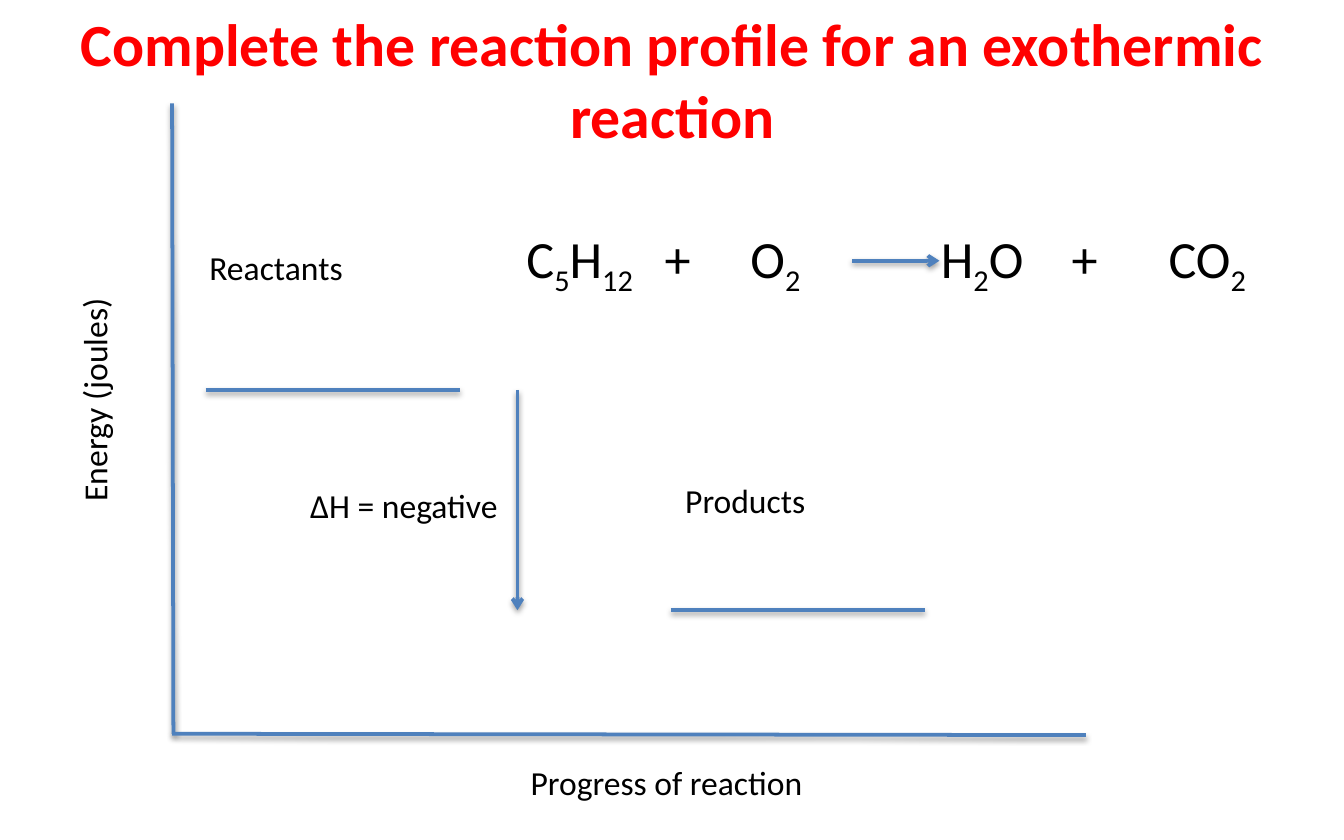
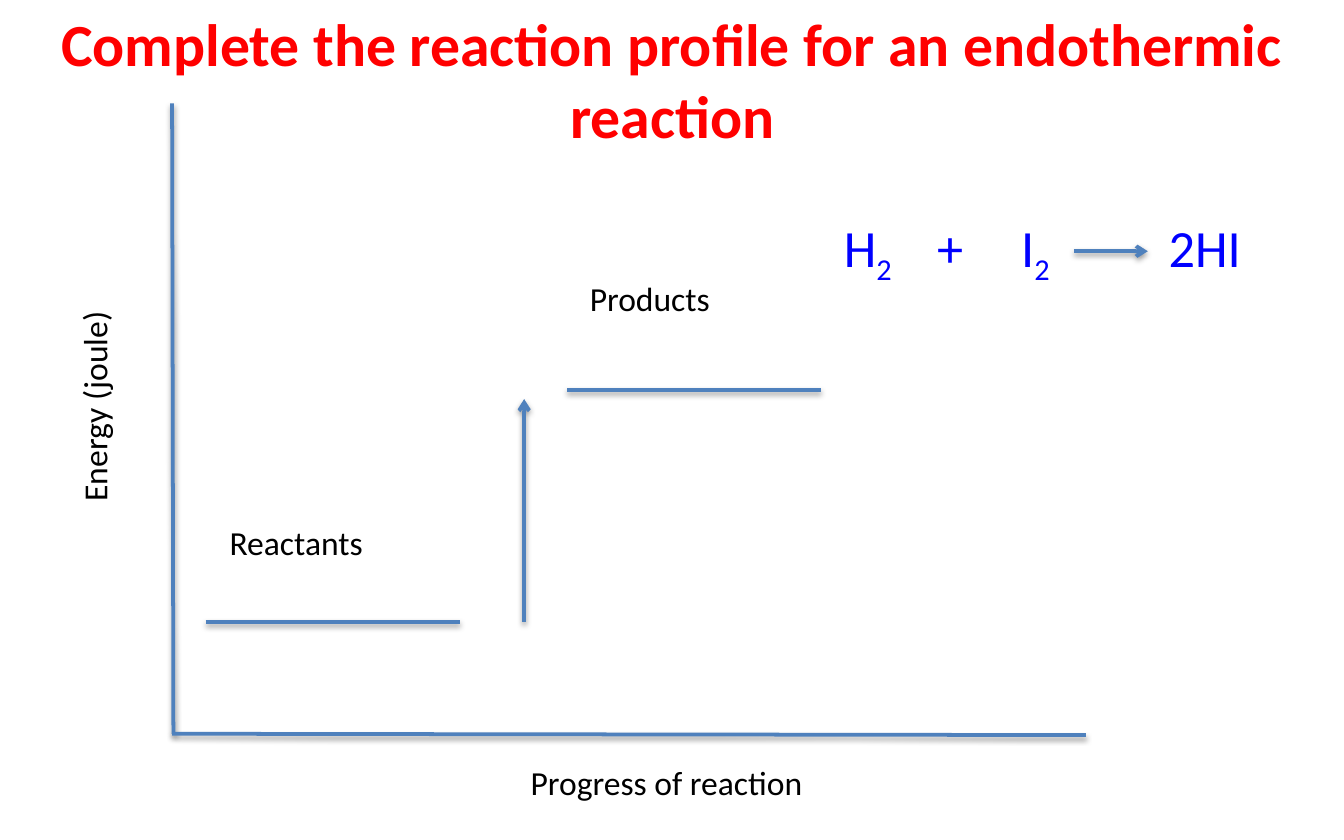
import dataclasses

import lxml.etree
import pptx
import pptx.dml.color
import pptx.enum.shapes
import pptx.enum.text
import pptx.oxml.ns
import pptx.util

Pt = pptx.util.Pt
qn = pptx.oxml.ns.qn


@dataclasses.dataclass(frozen=True)
class Theme:
    font: str = "Calibri"
    title_color: str = "FF0000"
    text_color: str = "000000"
    accent_color: str = "0000FF"
    line_color: str = "4F81BD"
    shadow_color: str = "000000"
    title_size: int = 32
    formula_size: int = 28
    label_size: int = 18
    line_width: int = 2


THEME = Theme()
LEVEL_WIDTH = 136
HIGH_LEVEL = 208.8
LABEL_HEIGHT = 28.8
LABEL_WIDTH = 152


def format_runs(paragraph, size, color, bold=False):
    for span in paragraph.runs:
        span.font.name = THEME.font
        span.font.size = Pt(size)
        span.font.bold = bold
        span.font.color.rgb = pptx.dml.color.RGBColor.from_string(color)


def add_title(page, text):
    title = page.shapes.title
    title.left, title.top, title.width, title.height = Pt(20), Pt(0), Pt(680.4), Pt(85)
    frame = title.text_frame
    frame.text = text
    frame.word_wrap = True
    frame.auto_size = pptx.enum.text.MSO_AUTO_SIZE.NONE
    frame.vertical_anchor = pptx.enum.text.MSO_ANCHOR.TOP
    para = frame.paragraphs[0]
    para.alignment = pptx.enum.text.PP_ALIGN.CENTER
    format_runs(para, THEME.title_size, THEME.title_color, bold=True)


def add_box(page, left, top, width, height):
    box = page.shapes.add_textbox(Pt(left), Pt(top), Pt(width), Pt(height))
    box.text_frame.word_wrap = True
    box.text_frame.auto_size = pptx.enum.text.MSO_AUTO_SIZE.SHAPE_TO_FIT_TEXT
    return box


def add_label(page, text, left, top, width=LABEL_WIDTH, rotation=0):
    box = add_box(page, left, top, width, LABEL_HEIGHT)
    box.rotation = rotation
    box.text_frame.text = text
    format_runs(box.text_frame.paragraphs[0], THEME.label_size, THEME.text_color)


def add_formula(page, formula, left, top, width, tab_stops, color):
    """Write a formula; braces mark subscripts and tabs move to the stops."""
    para = add_box(page, left, top, width, 41).text_frame.paragraphs[0]
    tab_list = lxml.etree.SubElement(para._p.get_or_add_pPr(), qn("a:tabLst"))
    for stop in tab_stops:
        lxml.etree.SubElement(tab_list, qn("a:tab"), pos=str(Pt(stop)), algn="l")
    for index, piece in enumerate(formula.replace("{", "}").split("}")):
        if piece:
            span = para.add_run()
            span.text = piece
            if index % 2:
                span._r.get_or_add_rPr().set("baseline", "-25000")
    format_runs(para, THEME.formula_size, color)


def add_shadow(line):
    effects = lxml.etree.SubElement(line._element.spPr, qn("a:effectLst"))
    shadow = lxml.etree.SubElement(
        effects, qn("a:outerShdw"), blurRad=str(Pt(3.1)), dist=str(Pt(1.6)),
        dir="5400000", rotWithShape="0")
    color = lxml.etree.SubElement(shadow, qn("a:srgbClr"), val=THEME.shadow_color)
    lxml.etree.SubElement(color, qn("a:alpha"), val="38000")


def add_line(page, start, end, arrow=False):
    line = page.shapes.add_connector(
        pptx.enum.shapes.MSO_CONNECTOR.STRAIGHT, *map(Pt, start + end))
    line.line.width = Pt(THEME.line_width)
    line.line.color.rgb = pptx.dml.color.RGBColor.from_string(THEME.line_color)
    if arrow:
        lxml.etree.SubElement(line.line._get_or_add_ln(), qn("a:tailEnd"), type="arrow")
    add_shadow(line)


def add_level(page, left, height):
    add_line(page, (left, height), (left + LEVEL_WIDTH, height))


def add_profile_page(deck, title, energy_label):
    """Add a page with the title, both axes and their labels."""
    page = deck.slides.add_slide(deck.slide_layouts[5])
    add_title(page, title)
    add_line(page, (92.2, 55.4), (92.9, 393.1))
    add_line(page, (92.2, 393.1), (581.8, 393.8))
    add_label(page, "Progress of reaction", 277.2, 404.6, width=269.3)
    add_label(page, energy_label, -61.9, 149, width=224.6, rotation=270)
    return page


def add_exothermic_page(deck):
    page = add_profile_page(
        deck, "Complete the reaction profile for an exothermic reaction", "Energy (joules)")
    low_level = 326.9
    # Energy levels
    add_level(page, 110.2, HIGH_LEVEL)
    add_label(page, "Reactants", 105.1, 128.9)
    add_level(page, 359.3, low_level)
    add_label(page, "Products", 360, 253.4)
    # Energy change
    add_line(page, (277.2, HIGH_LEVEL), (277.2, low_level), arrow=True)
    add_label(page, "ΔH = negative", 159.1, 256.3)
    # Equation
    add_formula(page, "C{5}H{12}\t+\tO{2}\tH{2}O\t+\tCO{2}", 275, 117.4, 486.7,
                (74, 120, 222, 292, 344), THEME.text_color)
    add_line(page, (456.5, 139.7), (503.3, 139.7), arrow=True)


def add_endothermic_page(deck):
    page = add_profile_page(
        deck, "Complete the reaction profile for an endothermic reaction", "Energy (joule)")
    low_level = 333.2
    # Energy levels
    add_level(page, 110.2, low_level)
    add_label(page, "Reactants", 115.9, 275.8)
    add_level(page, 303.8, HIGH_LEVEL)
    add_label(page, "Products", 308.9, 145.4)
    # Energy change
    add_line(page, (280.8, low_level), (280.8, 213.8), arrow=True)
    # Equation
    add_formula(page, "H{2}\t+\tI{2}\t2HI", 445, 111.6, 254.9,
                (50, 95, 174), THEME.accent_color)
    add_line(page, (575.3, 134.6), (614.9, 134.6), arrow=True)


def main():
    deck = pptx.Presentation()
    deck.slide_width, deck.slide_height = Pt(720), Pt(450)
    add_exothermic_page(deck)
    add_endothermic_page(deck)
    deck.save("out.pptx")


if __name__ == "__main__":
    main()
